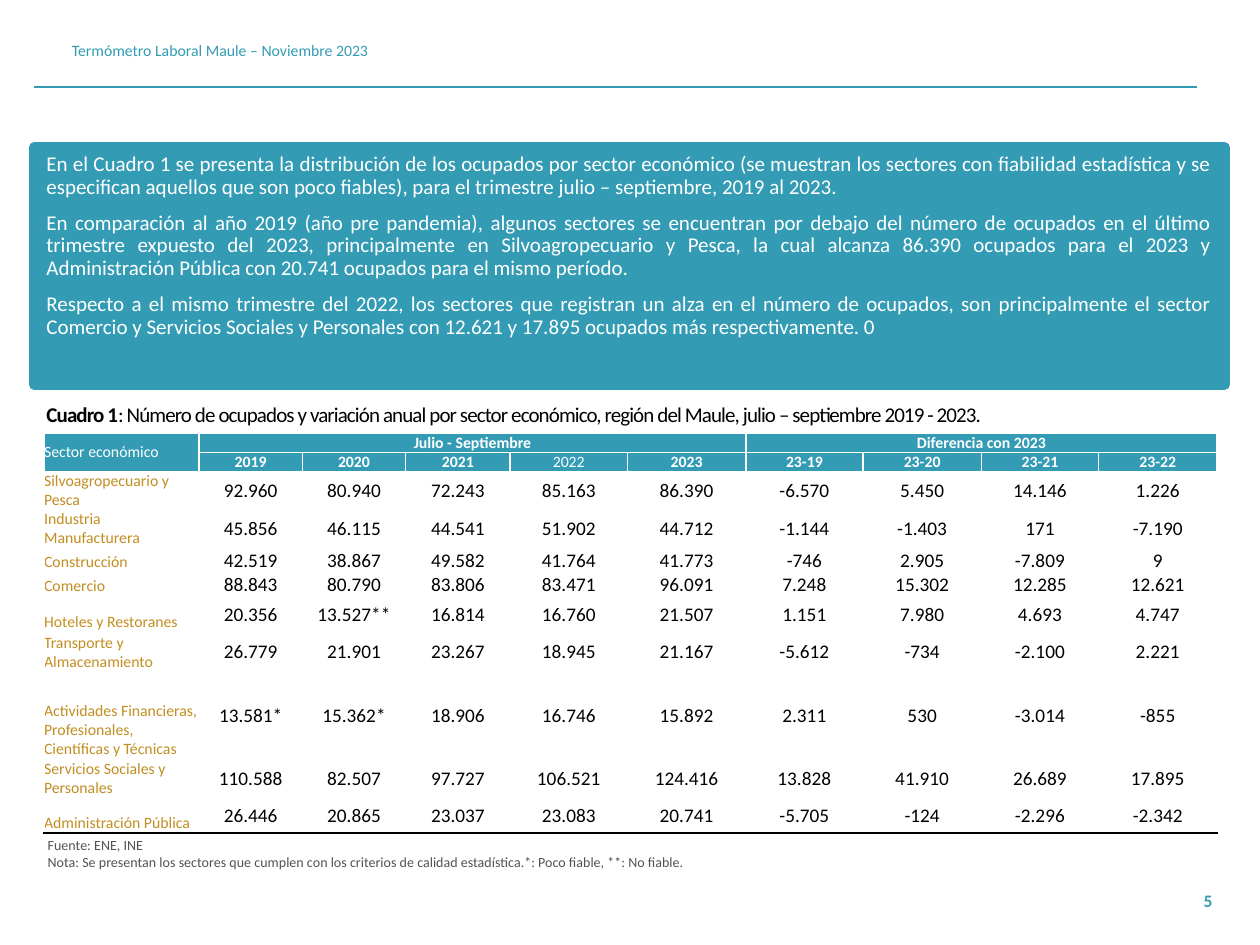
"""Build the slide on employment by economic sector in the Maule region."""
from dataclasses import dataclass

from lxml.etree import SubElement
from pptx import Presentation
from pptx.dml.color import RGBColor
from pptx.enum.shapes import MSO_CONNECTOR as Connector, MSO_SHAPE as Shape
from pptx.enum.text import MSO_ANCHOR as Anchor, PP_ALIGN as Align
from pptx.oxml.ns import qn
from pptx.util import Inches, Pt

TEAL = RGBColor(0x33, 0x9C, 0xB4)
GOLD = RGBColor(0xC2, 0x8E, 0x21)
GRAY = RGBColor(0x52, 0x52, 0x52)
WHITE = RGBColor(0xFF, 0xFF, 0xFF)
BLACK = RGBColor(0x00, 0x00, 0x00)
FONT = "Calibri"


@dataclass(frozen=True)
class Style:
    size: float
    color: RGBColor
    bold: bool = False
    align: Align = Align.LEFT
    line_spacing: float | None = None
    space_before: float = 0


@dataclass(frozen=True)
class Sector:
    name: str
    height: float
    figures: str


HEADER = Style(9, TEAL)
PAGE_NUMBER = Style(10, TEAL, True, Align.RIGHT)
SUMMARY = Style(12, WHITE, False, Align.JUSTIFY, 0.9, 7.5)
CAPTION = Style(12, BLACK, False, Align.JUSTIFY, 0.9)
SOURCE = Style(8, GRAY)
CORNER = Style(9, WHITE)
HEADING = Style(9, WHITE, True, Align.CENTER)
LIGHT_HEADING = Style(9, WHITE, False, Align.CENTER)
SECTOR_NAME = Style(9, GOLD)
FIGURE = Style(11, BLACK, False, Align.CENTER)

SUMMARY_TEXTS = [
    "En el Cuadro 1 se presenta la distribución de los ocupados por sector económico (se muestran los "
    "sectores con fiabilidad estadística y se especifican aquellos que son poco fiables), para el "
    "trimestre julio – septiembre, 2019 al 2023.",
    "En comparación al año 2019 (año pre pandemia), algunos sectores se encuentran por debajo del número "
    "de ocupados en el último trimestre expuesto del 2023, principalmente en Silvoagropecuario y Pesca, "
    "la cual alcanza 86.390 ocupados para el 2023 y Administración Pública con 20.741 ocupados para el "
    "mismo período.",
    "Respecto a el mismo trimestre del 2022, los sectores que registran un alza en el número de ocupados, "
    "son principalmente el sector Comercio y Servicios Sociales y Personales con 12.621 y 17.895 ocupados "
    "más respectivamente. 0",
]
CAPTION_PARTS = [
    ("Cuadro 1", True),
    (": Número de ocupados y variación anual por sector económico, región del Maule, "
     "julio – septiembre 2019 - 2023.", False),
]
SOURCE_TEXTS = [
    "Fuente: ENE, INE",
    "Nota: Se presentan los sectores que cumplen con los criterios de calidad estadística."
    "*: Poco fiable, **: No fiable.",
]
GROUPS = [("Julio - Septiembre", 1, 5), ("Diferencia con 2023", 6, 9)]
PERIODS = "2019 2020 2021 2022 2023 23-19 23-20 23-21 23-22".split()
WIDTHS = [1.23, 0.82, 0.82, 0.83] + [0.93, 0.94] * 3
HEADING_HEIGHT = 0.14
SECTORS = [
    Sector("Silvoagropecuario y Pesca", 0.28,
           "92.960 80.940 72.243 85.163 86.390 -6.570 5.450 14.146 1.226"),
    Sector("Industria Manufacturera", 0.28,
           "45.856 46.115 44.541 51.902 44.712 -1.144 -1.403 171 -7.190"),
    Sector("Construcción", 0.18, "42.519 38.867 49.582 41.764 41.773 -746 2.905 -7.809 9"),
    Sector("Comercio", 0.18, "88.843 80.790 83.806 83.471 96.091 7.248 15.302 12.285 12.621"),
    Sector("Hoteles y Restoranes", 0.28,
           "20.356 13.527** 16.814 16.760 21.507 1.151 7.980 4.693 4.747"),
    Sector("Transporte y Almacenamiento", 0.32,
           "26.779 21.901 23.267 18.945 21.167 -5.612 -734 -2.100 2.221"),
    Sector("Actividades Financieras, Profesionales, Científicas y Técnicas", 0.69,
           "13.581* 15.362* 18.906 16.746 15.892 2.311 530 -3.014 -855"),
    Sector("Servicios Sociales y Personales", 0.31,
           "110.588 82.507 97.727 106.521 124.416 13.828 41.910 26.689 17.895"),
    Sector("Administración Pública", 0.28,
           "26.446 20.865 23.037 23.083 20.741 -5.705 -124 -2.296 -2.342"),
]


def format_paragraph(para, style: Style, first: bool = True) -> None:
    para.alignment = style.align
    para.space_before = Pt(0 if first else style.space_before)
    if style.line_spacing:
        para.line_spacing = style.line_spacing
    para.font.name = FONT
    para.font.size = Pt(style.size)
    para.font.bold = style.bold
    para.font.color.rgb = style.color


def write(frame, texts: list[str], style: Style, anchor: Anchor = Anchor.TOP) -> None:
    frame.word_wrap = True
    frame.vertical_anchor = anchor
    for index, text in enumerate(texts):
        para = frame.add_paragraph() if index else frame.paragraphs[0]
        para.text = text
        format_paragraph(para, style, index == 0)


def add_box(page, left: float, top: float, width: float, height: float):
    return page.shapes.add_textbox(Inches(left), Inches(top), Inches(width), Inches(height))


def add_header(page) -> None:
    title = page.shapes.title
    title.left, title.top, title.width, title.height = map(Inches, (0.47, 0.2, 3.38, 0.4))
    write(title.text_frame, ["Termómetro Laboral Maule – Noviembre 2023"], HEADER, Anchor.MIDDLE)
    rule = page.shapes.add_connector(
        Connector.STRAIGHT, Inches(0.27), Inches(0.69), Inches(9.5), Inches(0.69))
    rule.line.color.rgb = TEAL
    rule.line.width = Pt(1)
    SubElement(rule._element.spPr, qn("a:effectLst"))


def add_summary(page) -> None:
    panel = page.shapes.add_shape(
        Shape.RECTANGLE, Inches(0.27), Inches(1.17), Inches(9.45), Inches(1.88))
    panel.shadow.inherit = False
    panel.fill.solid()
    panel.fill.fore_color.rgb = TEAL
    panel.line.color.rgb = TEAL
    panel.line.width = Pt(6)
    SubElement(panel.line._get_or_add_ln(), qn("a:round"))
    write(panel.text_frame, SUMMARY_TEXTS, SUMMARY)


def add_caption(page) -> None:
    frame = add_box(page, 0.27, 3.16, 9.39, 0.28).text_frame
    frame.word_wrap = True
    para = frame.paragraphs[0]
    format_paragraph(para, CAPTION)
    for text, bold in CAPTION_PARTS:
        span = para.add_run()
        span.text = text
        span.font.bold = bold
        span._r.get_or_add_rPr().set("spc", "-50")


def set_borders(cell, bottom: RGBColor) -> None:
    for side in "LRTB":
        line = SubElement(cell._tc.get_or_add_tcPr(), qn(f"a:ln{side}"), w=str(Pt(1)))
        fill = SubElement(line, qn("a:solidFill"))
        SubElement(fill, qn("a:srgbClr"), val=str(bottom if side == "B" else WHITE))


def fill_cell(cell, text: str, style: Style, anchor: Anchor = Anchor.MIDDLE) -> None:
    inset = Inches(0.01 if style is FIGURE else 0)
    cell.margin_left = cell.margin_right = cell.margin_top = inset
    cell.margin_bottom = 0
    cell.vertical_anchor = anchor
    para = cell.text_frame.paragraphs[0]
    para.text = text
    format_paragraph(para, style)


def add_sector_table(page) -> None:
    heights = [HEADING_HEIGHT] * 2 + [sector.height for sector in SECTORS]
    table = page.shapes.add_table(
        len(heights), len(WIDTHS), Inches(0.35), Inches(3.44),
        Inches(sum(WIDTHS)), Inches(sum(heights))).table
    table.first_row = table.horz_banding = False
    for column, width in zip(table.columns, WIDTHS):
        column.width = Inches(width)
    for index, (row, height) in enumerate(zip(table.rows, heights)):
        row.height = Inches(height)
        for cell in row.cells:
            set_borders(cell, BLACK if index == len(heights) - 1 else WHITE)
            if index < 2:
                cell.fill.solid()
                cell.fill.fore_color.rgb = TEAL
            else:
                cell.fill.background()
            fill_cell(cell, "", HEADING)
    table.cell(0, 0).merge(table.cell(1, 0))
    fill_cell(table.cell(0, 0), "Sector económico", CORNER)
    for text, start, end in GROUPS:
        table.cell(0, start).merge(table.cell(0, end))
        fill_cell(table.cell(0, start), text, HEADING)
    for column, period in enumerate(PERIODS, 1):
        fill_cell(table.cell(1, column), period, LIGHT_HEADING if period == "2022" else HEADING)
    for row, sector in enumerate(SECTORS, 2):
        fill_cell(table.cell(row, 0), sector.name, SECTOR_NAME, Anchor.BOTTOM)
        for column, figure in enumerate(sector.figures.split(), 1):
            fill_cell(table.cell(row, column), figure, FIGURE)


def main() -> None:
    deck = Presentation()
    deck.slide_width, deck.slide_height = Inches(10), Inches(7.5)
    page = deck.slides.add_slide(deck.slide_layouts[5])
    add_header(page)
    write(add_box(page, 7.47, 6.95, 2.25, 0.4).text_frame, ["5"], PAGE_NUMBER, Anchor.MIDDLE)
    add_summary(page)
    add_caption(page)
    add_sector_table(page)
    write(add_box(page, 0.28, 6.59, 6.02, 0.37).text_frame, SOURCE_TEXTS, SOURCE)
    deck.save("out.pptx")


if __name__ == "__main__":
    main()
